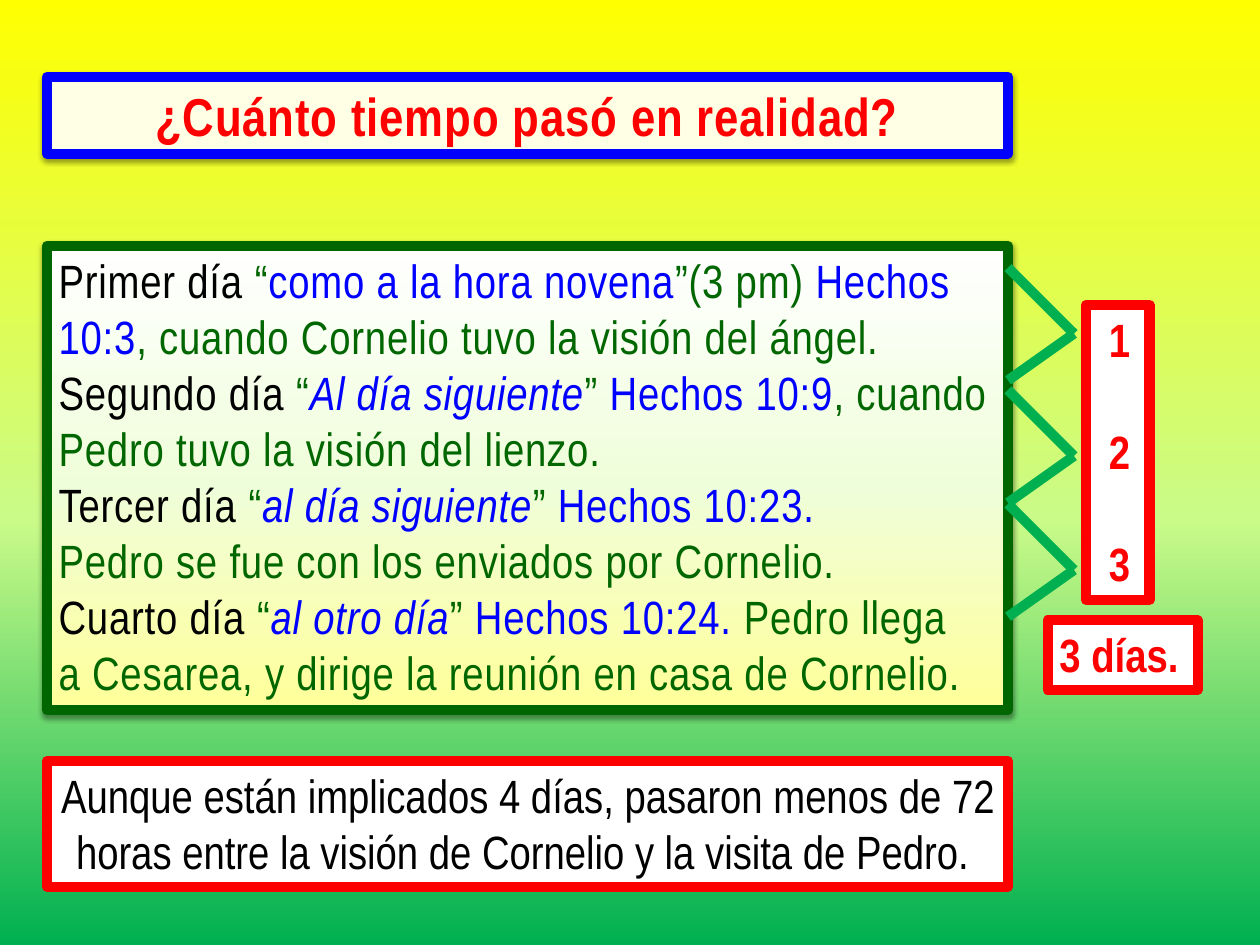
from lxml.etree import SubElement
from pptx import Presentation
from pptx.dml.color import RGBColor
from pptx.enum.shapes import MSO_CONNECTOR, MSO_SHAPE
from pptx.enum.text import MSO_ANCHOR, MSO_AUTO_SIZE, PP_ALIGN
from pptx.oxml.ns import qn
from pptx.util import Inches, Pt

BLACK = RGBColor(0x00, 0x00, 0x00)
WHITE = RGBColor(0xFF, 0xFF, 0xFF)
RED = RGBColor(0xFF, 0x00, 0x00)
BLUE = RGBColor(0x00, 0x00, 0xFF)
GREEN = RGBColor(0x00, 0x66, 0x00)
EMERALD = RGBColor(0x00, 0xB0, 0x50)
LIME = RGBColor(0xCA, 0xFB, 0x89)
YELLOW = RGBColor(0xFF, 0xFF, 0x00)
CREAM = RGBColor(0xFF, 0xFF, 0xE5)
PALE_YELLOW = RGBColor(0xFF, 0xFF, 0x99)
PALE_LIME = RGBColor(0xEF, 0xFE, 0xDA)

PAGE_STOPS = [(0, YELLOW), (55, LIME), (100, EMERALD)]
DAYS_STOPS = [(0, PALE_YELLOW), (48, PALE_LIME), (100, WHITE)]

DAYS = [
    [("Primer día ", BLACK), ("“", GREEN), ("como a la hora novena", BLUE),
     ("”(3 pm)", GREEN), (" Hechos 10:3", BLUE),
     (", cuando Cornelio tuvo la visión del ángel.", GREEN)],
    [("Segundo día ", BLACK), ("“", GREEN), ("Al día siguiente", BLUE, True),
     ("”", GREEN), (" Hechos 10:9", BLUE),
     (", cuando Pedro tuvo la visión del lienzo.", GREEN)],
    [("Tercer día ", BLACK), ("“", GREEN), ("al día siguiente", BLUE, True),
     ("”", GREEN), (" Hechos 10:23.", BLUE)],
    [("Pedro se fue con los enviados por Cornelio.", GREEN)],
    [("Cuarto día ", BLACK), ("“", GREEN), ("al otro día", BLUE, True),
     ("”", GREEN), (" Hechos 10:24.", BLUE), (" Pedro llega", GREEN)],
    [("a Cesarea, y dirige la reunión en casa de Cornelio.", GREEN)],
]
CONCLUSION = ("Aunque están implicados 4 días, pasaron menos de 72 horas "
              "entre la visión de Cornelio y la visita de Pedro. ")


def add_span(para, text, color, italic=False, size=28, bold=False,
             spacing=0, outline=1.5):
    span = para.add_run()
    span.text = text
    font = span.font
    font.name, font.size = "Arial Narrow", Pt(size)
    font.bold, font.italic = bold, italic
    font.color.rgb = color
    properties = para._p.findall(qn("a:r"))[-1].find(qn("a:rPr"))
    properties.set("spc", str(int(spacing * 100)))
    edge = SubElement(properties, qn("a:ln"), w=str(Pt(outline)))
    edge_fill = SubElement(edge, qn("a:solidFill"))
    SubElement(edge_fill, qn("a:srgbClr"), val=str(color))
    properties.insert(0, edge)


def set_gradient(fill, element, stops, angle):
    fill.gradient()
    gradient = next(element.iter(qn("a:gradFill")))
    stop_list = gradient.find(qn("a:gsLst"))
    for stop in list(stop_list):
        stop_list.remove(stop)
    for position, color in stops:
        stop = SubElement(stop_list, qn("a:gs"), pos=str(position * 1000))
        SubElement(stop, qn("a:srgbClr"), val=str(color))
    gradient.find(qn("a:lin")).set("ang", str(angle * 60000))


class Board:
    cell = 0.1
    line_width = Pt(6)

    def __init__(self, deck):
        self.page = deck.slides.add_slide(deck.slide_layouts[5])
        self.shapes = self.page.shapes
        set_gradient(self.page.background.fill, self.page.element, PAGE_STOPS, 90)

    def grid(self, *cells):
        return [Inches(count * self.cell) for count in cells]

    def start_group(self):
        self.shapes = self.page.shapes.add_group_shape().shapes

    def stroke(self, shape, color):
        shape.line.color.rgb = color
        shape.line.width = self.line_width
        SubElement(next(shape.element.iter(qn("a:ln"))), qn("a:round"))

    def panel(self, at, paragraphs, fill, line, shadow=False, align=PP_ALIGN.LEFT,
              gap=0, inset=1, box=None, **style):
        place = self.grid(*at)
        if box is None:
            box = self.shapes.add_shape(MSO_SHAPE.RECTANGLE, *place)
        else:
            box.left, box.top, box.width, box.height = place
        if isinstance(fill, list):
            set_gradient(box.fill, box.element, fill, 270)
        else:
            box.fill.solid()
            box.fill.fore_color.rgb = fill
        self.stroke(box, line)
        box.shadow.inherit = False
        if shadow:
            self.cast_shadow(box)
        frame = box.text_frame
        frame.word_wrap = True
        frame.auto_size = MSO_AUTO_SIZE.NONE
        frame.vertical_anchor = MSO_ANCHOR.TOP
        frame.margin_left, frame.margin_right = self.grid(inset, 2 - inset)
        frame.margin_top = frame.margin_bottom = Inches(0.05)
        for index, spans in enumerate(paragraphs):
            para = frame.add_paragraph() if index else frame.paragraphs[0]
            para.alignment = align
            para.space_before = Pt(gap if index else 0)
            for span in spans:
                add_span(para, *span, **style)

    def cast_shadow(self, box):
        effects = next(box.element.iter(qn("a:effectLst")))
        outer = SubElement(effects, qn("a:outerShdw"), blurRad=str(Pt(3.1)),
                           dist=str(Pt(1.6)), dir="5400000", rotWithShape="0")
        color = SubElement(outer, qn("a:srgbClr"), val=str(BLACK))
        SubElement(color, qn("a:alpha"), val="38000")

    def title(self, at, text, **style):
        self.panel(at, [[(text, RED)]], box=self.page.shapes.title, **style)

    def connector(self, start, end, color):
        line = self.shapes.add_connector(MSO_CONNECTOR.STRAIGHT,
                                         *self.grid(*start, *end))
        self.stroke(line, color)
        SubElement(line.element.spPr, qn("a:effectLst"))


def main():
    deck = Presentation()
    deck.slide_width = Inches(10.5)
    deck.slide_height = deck.slide_width * 3 // 4
    board = Board(deck)
    left, width = 3.9, 80.1
    board.title((left, 6.4, width, 6.4), "¿Cuánto tiempo pasó en realidad?",
                fill=CREAM, line=BLUE, shadow=True, align=PP_ALIGN.CENTER,
                size=32, bold=True, spacing=0.5, outline=0.25)
    board.panel((left, 63.4, width, 10.5), [[(CONCLUSION, BLACK)]], WHITE, RED,
                align=PP_ALIGN.CENTER)
    board.panel((left, 20.5, width, 38.7), DAYS, DAYS_STOPS, GREEN,
                shadow=True, spacing=0.5)

    board.start_group()
    edge, tip = left + width, 89.5
    for top in (22.3, 32.5, 42):
        peak = top + 5.5
        board.connector((edge, top), (tip, peak), EMERALD)
        board.connector((edge, peak + 3.9), (tip, peak), EMERALD)
    counts = [[(str(number), RED)] for number in range(1, 4)]
    board.panel((90.5, 25.4, 5.3, 24.6), counts, WHITE, RED, gap=33.6,
                inset=1.9, bold=True, outline=0.25)
    board.panel((87.3, 51.7, 12.5, 5.8), [[("3 días.", RED)]], WHITE, RED,
                bold=True, outline=0.25)
    deck.save("out.pptx")


if __name__ == "__main__":
    main()
